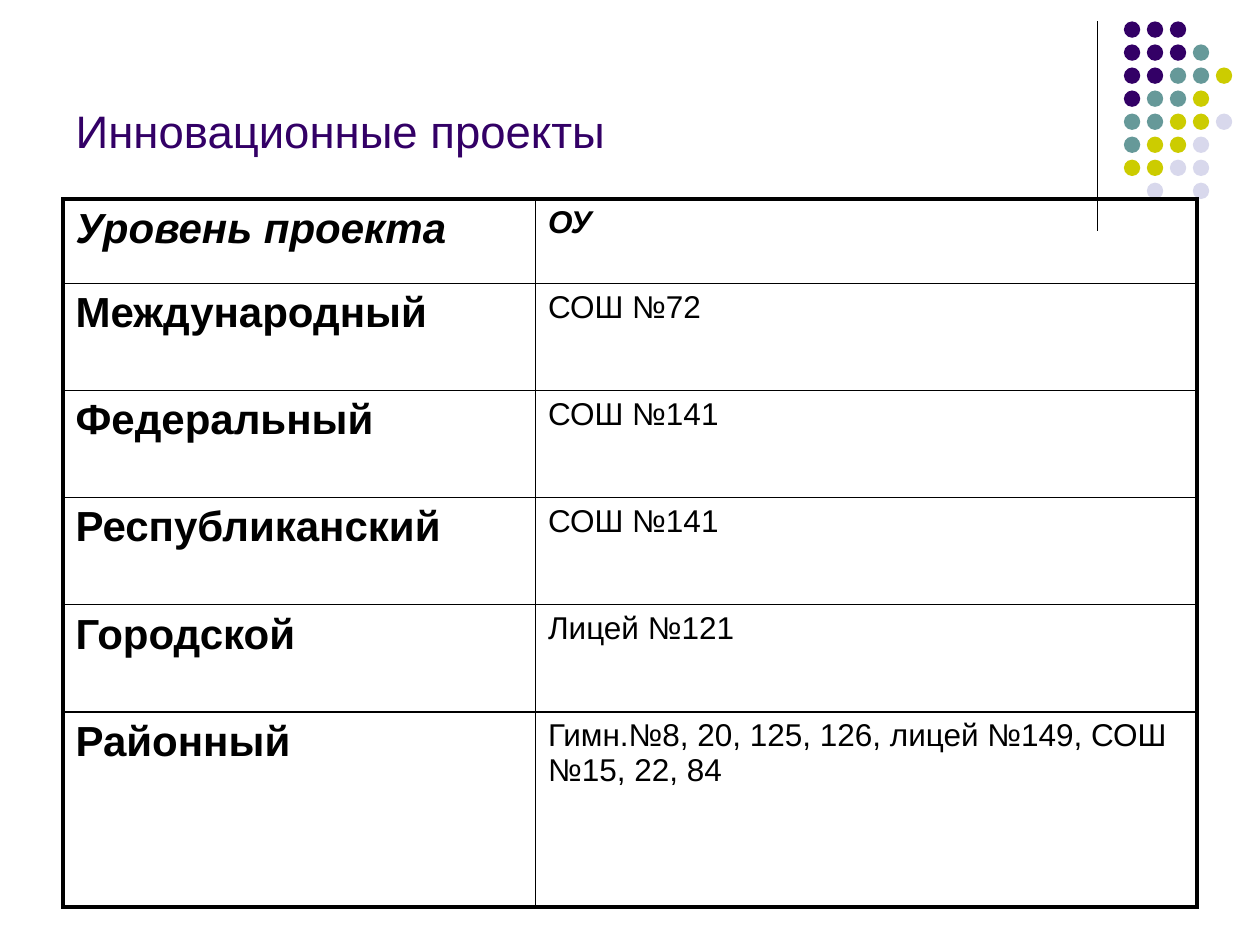
from collections import namedtuple
from dataclasses import dataclass

from lxml import etree
from pptx import Presentation
from pptx import util as u
from pptx.dml.color import RGBColor
from pptx.enum import shapes, text
from pptx.oxml.ns import qn

Box = namedtuple("Box", "left top width height")


@dataclass(frozen=True)
class Theme:
    """Colours, font and sizes of the slide."""
    font: str = "Arial"
    ink: str = "000000"
    accent: str = "330066"
    teal: str = "669999"
    lime: str = "CCCC00"
    pale: str = "D8D8EC"
    title: int = 26
    level: int = 24
    body: int = 18
    frame: float = 2.25
    grid: float = 1
    rule: float = 0.75


THEME = Theme()
DOT_COLORS = {"a": THEME.accent, "t": THEME.teal, "l": THEME.lime, "p": THEME.pale}
DOT_ROWS = ("aaa", "aaat", "aattl", "attl", "ttllp", "tllp", "llpp", " p p")
PROJECTS = (
    ("Уровень проекта", "ОУ"),
    ("Международный", "СОШ №72"),
    ("Федеральный", "СОШ №141"),
    ("Республиканский", "СОШ №141"),
    ("Городской", "Лицей №121"),
    ("Районный", "Гимн.№8, 20, 125, 126, лицей №149, СОШ №15, 22, 84"),
)
COLUMN_WIDTHS = (3.75, 5.25)
ROW_HEIGHTS = (0.67, *[0.85] * 4, 1.55)


def place(item, box):
    """Move an object to a box given in inches."""
    item.left, item.top, item.width, item.height = map(u.Inches, box)


def write(frame, words, size, color, bold=False, italic=False):
    """Set one paragraph of text and format its run."""
    frame.text = words
    para = frame.paragraphs[0]
    para.alignment = text.PP_ALIGN.LEFT
    font = para.runs[0].font
    font.name, font.size = THEME.font, u.Pt(size)
    font.bold, font.italic = bold, italic
    font.color.rgb = RGBColor.from_string(color)


def add_rule(page, box):
    """Draw the thin vertical line at the left edge of a box."""
    left, top, bottom = map(u.Inches, (box.left, box.top, box.top + box.height))
    rule = page.shapes.add_connector(shapes.MSO_CONNECTOR.STRAIGHT, left, top, left, bottom)
    rule.line.color.rgb = RGBColor.from_string(THEME.ink)
    rule.line.width = u.Pt(THEME.rule)
    etree.SubElement(rule.element.spPr, qn("a:effectLst"))


def add_dots(page, box, size):
    """Fill a box with the grid of coloured dots."""
    group = page.shapes.add_group_shape()
    across = (box.width - size) / (max(map(len, DOT_ROWS)) - 1)
    down = (box.height - size) / (len(DOT_ROWS) - 1)
    for row, marks in enumerate(DOT_ROWS):
        for column, mark in enumerate(marks):
            if mark == " ":
                continue
            spot = (box.left + column * across, box.top + row * down, size, size)
            dot = group.shapes.add_shape(shapes.MSO_SHAPE.OVAL, *map(u.Inches, spot))
            dot.shadow.inherit = False
            dot.fill.solid()
            dot.fill.fore_color.rgb = RGBColor.from_string(DOT_COLORS[mark])
            dot.line.fill.background()


def add_title(page, box, words):
    """Place the slide title at the bottom of a box."""
    title = page.shapes.title
    place(title, box)
    write(title.text_frame, words, THEME.title, THEME.accent)
    title.text_frame.word_wrap = True
    title.text_frame.vertical_anchor = text.MSO_ANCHOR.BOTTOM


def set_borders(cell, outer_sides):
    """Give a cell thick outer borders and thin inner ones."""
    properties = cell._tc.get_or_add_tcPr()
    for side in "LRTB":
        width = THEME.frame if side in outer_sides else THEME.grid
        line = etree.SubElement(properties, qn(f"a:ln{side}"), w=str(u.Pt(width)))
        fill = etree.SubElement(line, qn("a:solidFill"))
        etree.SubElement(fill, qn("a:srgbClr"), val=THEME.ink)


def add_projects(page, box):
    """Build the table of project levels and schools in a box."""
    size = len(PROJECTS), len(COLUMN_WIDTHS)
    table = page.shapes.add_table(*size, *map(u.Inches, box)).table
    table.first_row = table.horz_banding = False
    for column, width in zip(table.columns, COLUMN_WIDTHS):
        column.width = u.Inches(width)
    for row, height in zip(table.rows, ROW_HEIGHTS):
        row.height = u.Inches(height)
    for row, values in enumerate(PROJECTS):
        for column, words in enumerate(values):
            cell = table.cell(row, column)
            head, level = row == 0, column == 0
            outer = ("L" if level else "R") + ("T" if head else "")
            outer += "B" if row == len(PROJECTS) - 1 else ""
            set_borders(cell, outer)
            cell.fill.background()
            write(cell.text_frame, words, THEME.level if level else THEME.body,
                  THEME.ink, bold=head or level, italic=head)


def main():
    """Build the slide and save the deck."""
    deck = Presentation()
    deck.slide_width, deck.slide_height = u.Inches(10), u.Inches(7.5)
    page = deck.slides.add_slide(deck.slide_layouts.get_by_name("Title Only"))
    add_rule(page, Box(8.71, 0.17, 0, 1.66))
    add_dots(page, Box(8.92, 0.17, 0.86, 1.41), 0.13)
    add_title(page, Box(0.5, 0.13, 8.25, 1.17), "Инновационные проекты")
    add_projects(page, Box(0.5, 1.58, sum(COLUMN_WIDTHS), sum(ROW_HEIGHTS)))
    deck.save("out.pptx")


if __name__ == "__main__":
    main()
